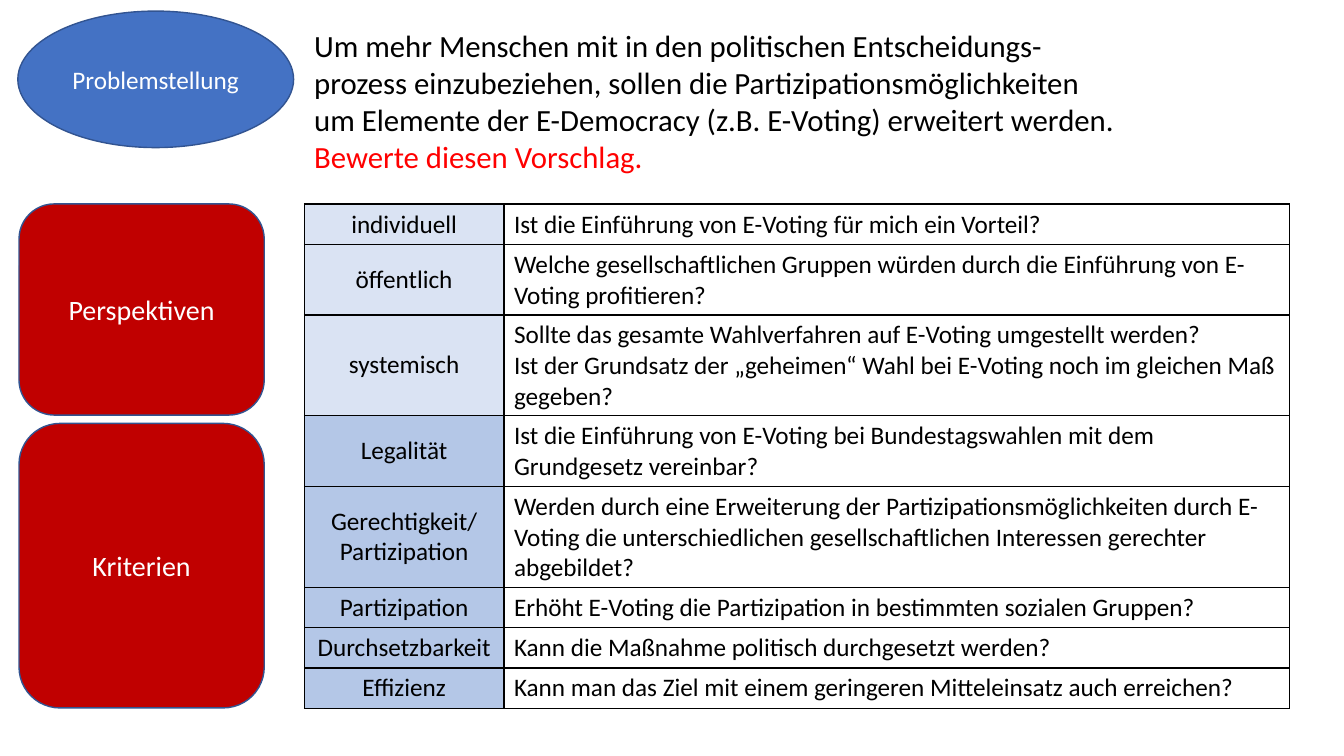
from lxml.etree import SubElement
from pptx import Presentation
from pptx.dml.color import RGBColor
from pptx.enum.shapes import MSO_SHAPE
from pptx.enum.text import MSO_ANCHOR, PP_ALIGN
from pptx.oxml.ns import qn
from pptx.util import Cm, Pt

FONT = "Calibri"
BLACK = RGBColor(0x00, 0x00, 0x00)
WHITE = RGBColor(0xFF, 0xFF, 0xFF)
BRIGHT_RED = RGBColor(0xFF, 0x00, 0x00)
DARK_RED = RGBColor(0xC0, 0x00, 0x00)
BLUE = RGBColor(0x44, 0x72, 0xC4)
OUTLINE_BLUE = RGBColor(0x32, 0x54, 0x91)
PALE_BLUE = RGBColor(0xDA, 0xE3, 0xF3)
LIGHT_BLUE = RGBColor(0xB4, 0xC7, 0xE7)


def add_span(para, text, size, color):
    span = para.add_run()
    span.text = text
    span.font.name = FONT
    span.font.size = Pt(size)
    span.font.color.rgb = color


def add_borders(cell):
    properties = cell._tc.get_or_add_tcPr()
    for position, side in enumerate(("a:lnL", "a:lnR", "a:lnT", "a:lnB")):
        line = properties.makeelement(qn(side), {"w": str(Pt(1))})
        fill = SubElement(line, qn("a:solidFill"))
        SubElement(fill, qn("a:srgbClr"), {"val": str(BLACK)})
        properties.insert(position, line)


deck = Presentation()
deck.slide_width = Cm(33.87)
deck.slide_height = Cm(19.05)
page = deck.slides.add_slide(deck.slide_layouts[6])

# Labels on the left: kind, left, top, width, height, fill, text, size
labels = [
    (MSO_SHAPE.OVAL, 0.45, 0.28, 6.95, 3.44, BLUE, "Problemstellung", 18),
    (MSO_SHAPE.ROUNDED_RECTANGLE, 0.48, 5.14, 6.18, 5.32, DARK_RED, "Perspektiven", 20),
    (MSO_SHAPE.ROUNDED_RECTANGLE, 0.48, 10.67, 6.18, 7.17, DARK_RED, "Kriterien", 20),
]
for kind, left, top, width, height, color, text, size in labels:
    label = page.shapes.add_shape(kind, Cm(left), Cm(top), Cm(width), Cm(height))
    label.shadow.inherit = False
    label.fill.solid()
    label.fill.fore_color.rgb = color
    label.line.color.rgb = OUTLINE_BLUE
    label.line.width = Pt(1)
    label.text_frame.vertical_anchor = MSO_ANCHOR.MIDDLE
    para = label.text_frame.paragraphs[0]
    para.alignment = PP_ALIGN.CENTER
    add_span(para, text, size, WHITE)

# Problem statement
box = page.shapes.add_textbox(Cm(7.67), Cm(0.56), Cm(20.9), Cm(4.01))
box.text_frame.word_wrap = True
para = box.text_frame.paragraphs[0]
add_span(
    para,
    "Um mehr Menschen mit in den politischen Entscheidungs-prozess einzubeziehen, "
    "sollen die Partizipationsmöglichkeiten um Elemente der E-Democracy "
    "(z.B. E-Voting) erweitert werden. ",
    22,
    BLACK,
)
add_span(para, "Bewerte diesen Vorschlag.", 22, BRIGHT_RED)

# Questions by perspective and criterion: fill, heading, lines of text, questions
rows = [
    (PALE_BLUE, "individuell", 1, ["Ist die Einführung von E-Voting für mich ein Vorteil?"]),
    (PALE_BLUE, "öffentlich", 2, [
        "Welche gesellschaftlichen Gruppen würden durch die Einführung von "
        "E-Voting profitieren?"]),
    (PALE_BLUE, "systemisch", 3, [
        "Sollte das gesamte Wahlverfahren auf E-Voting umgestellt werden?",
        "Ist der Grundsatz der „geheimen“ Wahl bei E-Voting noch im gleichen Maß gegeben?"]),
    (LIGHT_BLUE, "Legalität", 2, [
        "Ist die Einführung von E-Voting bei Bundestagswahlen mit dem "
        "Grundgesetz vereinbar?"]),
    (LIGHT_BLUE, "Gerechtigkeit/ Partizipation", 3, [
        "Werden durch eine Erweiterung der Partizipationsmöglichkeiten durch E-Voting "
        "die unterschiedlichen gesellschaftlichen Interessen gerechter abgebildet?"]),
    (LIGHT_BLUE, "Partizipation", 1, [
        "Erhöht E-Voting die Partizipation in bestimmten sozialen Gruppen?"]),
    (LIGHT_BLUE, "Durchsetzbarkeit", 1, ["Kann die Maßnahme politisch durchgesetzt werden?"]),
    (LIGHT_BLUE, "Effizienz", 1, [
        "Kann man das Ziel mit einem geringeren Mitteleinsatz auch erreichen?"]),
]
frame = page.shapes.add_table(len(rows), 2, Cm(7.67), Cm(5.14), Cm(24.82), Cm(12.7))
table = frame.table
table.first_row = False
table.horz_banding = False
table.columns[0].width = Cm(5.03)
table.columns[1].width = Cm(19.79)

for index, (color, heading, line_count, questions) in enumerate(rows):
    table.rows[index].height = Cm(0.25 + 0.76 * line_count)
    heading_cell, question_cell = table.cell(index, 0), table.cell(index, 1)

    heading_cell.fill.solid()
    heading_cell.fill.fore_color.rgb = color
    heading_cell.vertical_anchor = MSO_ANCHOR.MIDDLE
    para = heading_cell.text_frame.paragraphs[0]
    para.alignment = PP_ALIGN.CENTER
    add_span(para, heading, 18, BLACK)

    question_cell.fill.background()
    for number, question in enumerate(questions):
        text_frame = question_cell.text_frame
        para = text_frame.add_paragraph() if number else text_frame.paragraphs[0]
        add_span(para, question, 18, BLACK)

    add_borders(heading_cell)
    add_borders(question_cell)

deck.save("out.pptx")
